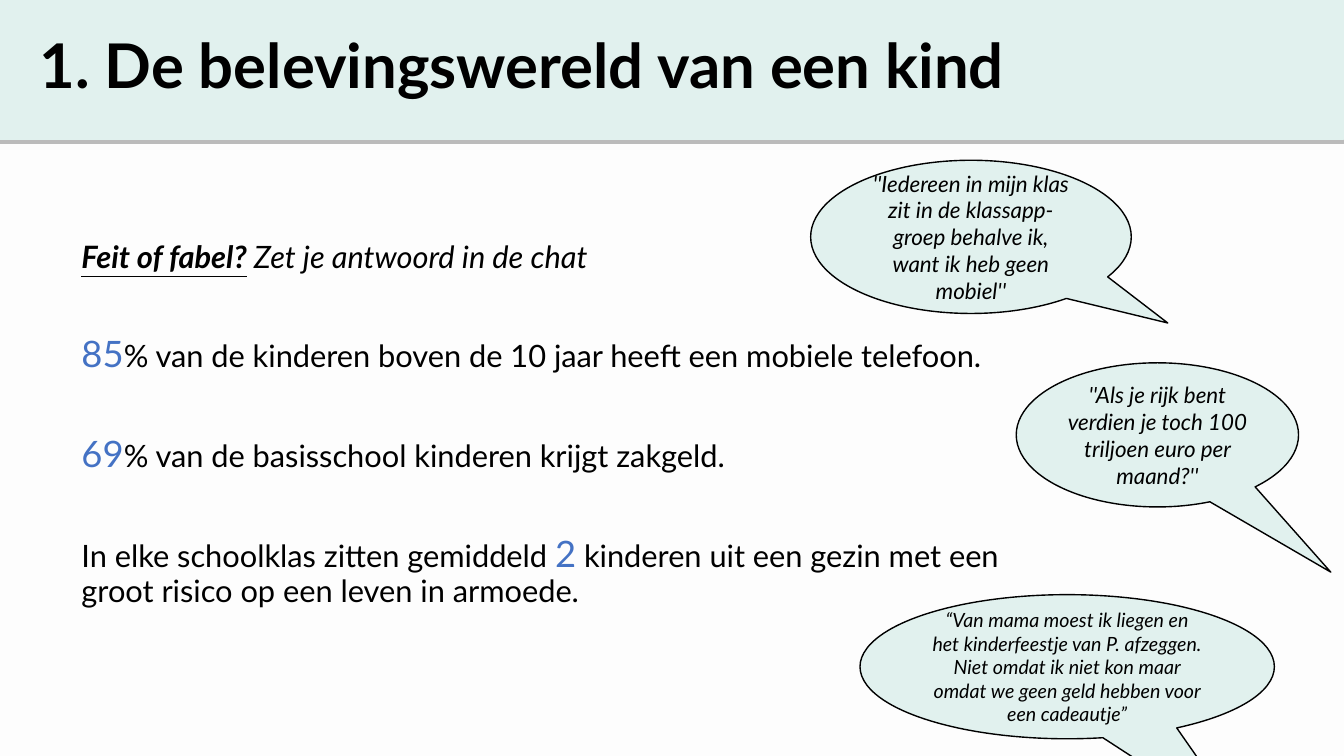
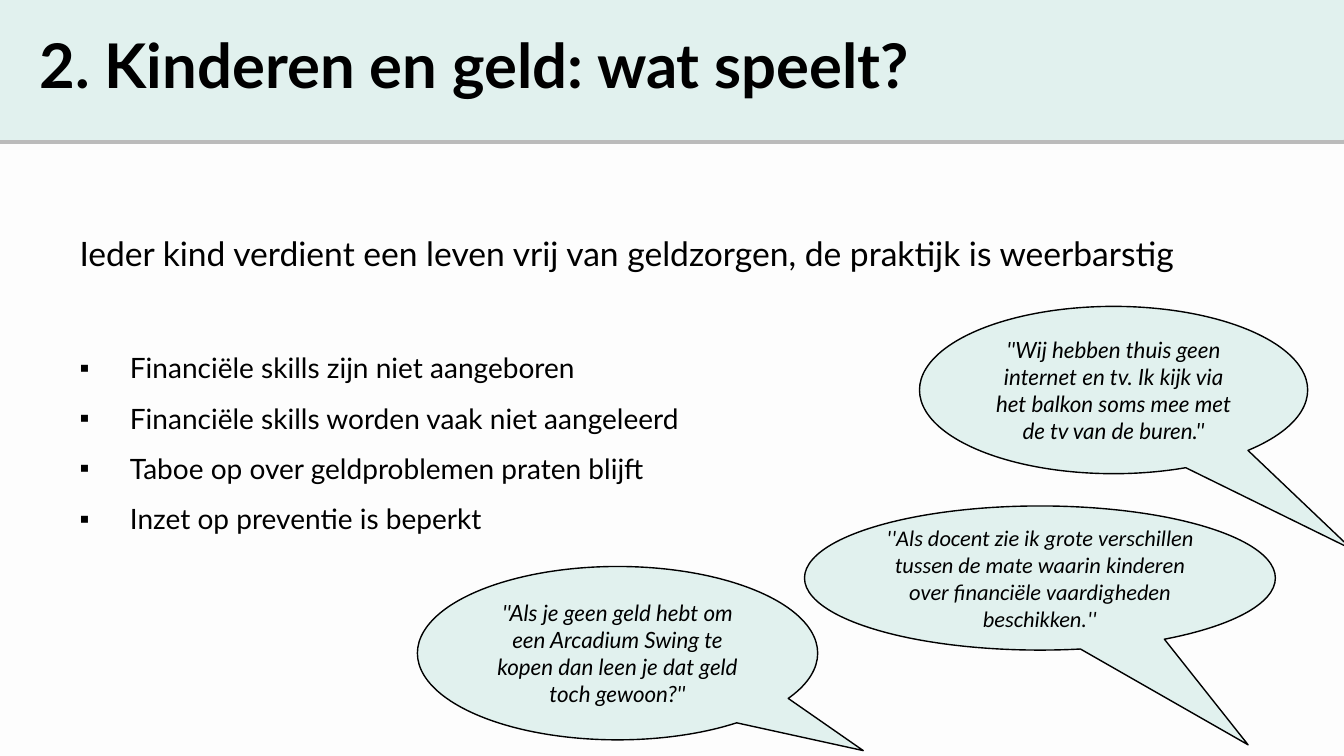
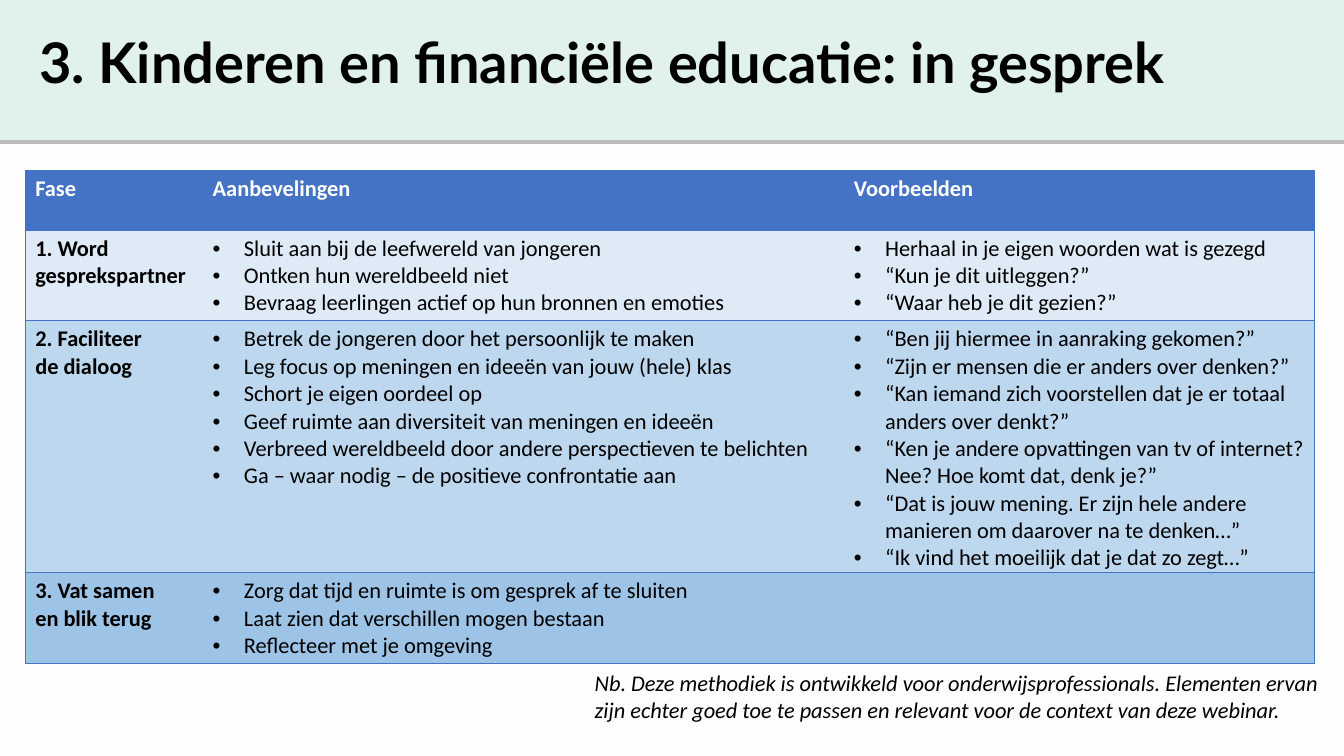
from lxml.etree import SubElement as Sub
from pptx import Presentation
from pptx.dml.color import RGBColor as Rgb
from pptx.enum.shapes import MSO_SHAPE as Kind
from pptx.enum.text import MSO_ANCHOR as Anchor, PP_ALIGN as Align
from pptx.oxml import parse_xml
from pptx.oxml.ns import nsdecls, qn
from pptx.util import Inches, Pt

# Shared look
PAPER = Rgb(0xFD, 0xFD, 0xFD)
MINT = Rgb(0xE1, 0xF1, 0xEE)
BLACK = Rgb(0, 0, 0)
WHITE = Rgb(0xFF, 0xFF, 0xFF)
BLUE = Rgb(0x44, 0x72, 0xC4)
TINTS = [Rgb(0xDE, 0xEB, 0xF7), Rgb(0xBD, 0xD7, 0xEE), Rgb(0x9D, 0xC3, 0xE6)]
HEAD, BODY = "Lato", "Calibri"
WIDE, HIGH = 13.33, 7.5
PLAIN = "{2D5ABB26-0587-4C30-8999-92F81FD0307C}"


def write(frame, *runs, size=16, font=HEAD, color=BLACK, bold=False,
          italic=False, align=Align.LEFT, line=None, before=None,
          bullet=None, indent=0):
    """Add a paragraph; a run is a text or a (text, changes) pair."""
    para = frame.paragraphs[0]
    if para.runs:
        para = frame.add_paragraph()
    para.alignment = align
    if line:
        para.line_spacing = line
    if before:
        para.space_before = Pt(before)
    if bullet:
        props = para._p.get_or_add_pPr()
        props.set("marL", str(Inches(indent)))
        props.set("indent", str(-Inches(indent)))
        Sub(props, qn("a:buFont")).set("typeface", "Arial")
        Sub(props, qn("a:buChar")).set("char", bullet)
    base = dict(size=size, bold=bold, italic=italic, color=color, under=False)
    for item in runs:
        text, diff = (item, {}) if isinstance(item, str) else item
        look = {**base, **diff}
        run = para.add_run()
        run.text = text
        run.font.name = font
        run.font.size = Pt(look["size"])
        run.font.bold = look["bold"]
        run.font.italic = look["italic"]
        run.font.underline = look["under"]
        run.font.color.rgb = look["color"]


def text_box(slide, box):
    frame = slide.shapes.add_textbox(*map(Inches, box)).text_frame
    frame.word_wrap = True
    return frame


def mint_shape(slide, kind, box, edge, width):
    shape = slide.shapes.add_shape(kind, *map(Inches, box))
    shape.shadow.inherit = False
    shape.fill.solid()
    shape.fill.fore_color.rgb = MINT
    shape.line.color.rgb = edge
    shape.line.width = Pt(width)
    shape.text_frame.word_wrap = True
    return shape


def start(deck, title, size=44):
    """New slide with the title band and its hard shadow."""
    slide = deck.slides.add_slide(deck.slide_layouts[6])
    slide.background.fill.solid()
    slide.background.fill.fore_color.rgb = PAPER
    band = mint_shape(slide, Kind.RECTANGLE, (0, 0, WIDE, 1.38), MINT, 0.75)
    band._element.spPr.find(qn("a:effectLst")).append(parse_xml(
        f'<a:outerShdw {nsdecls("a")} blurRad="0" dist="{Pt(3)}" '
        'dir="5400000" algn="t" rotWithShape="0"><a:srgbClr val="000000">'
        '<a:alpha val="25000"/></a:srgbClr></a:outerShdw>'))
    frame = band.text_frame
    frame.vertical_anchor = Anchor.TOP
    frame.margin_left, frame.margin_top = Inches(0.39), Inches(0.35)
    frame.margin_right, frame.margin_bottom = Inches(0.79), Inches(0.28)
    write(frame, title, size=size, bold=True, line=0.9)
    return slide


def quote(slide, box, tail, text, **look):
    """Speech balloon; tail is the tip as a share of the box."""
    shape = mint_shape(slide, Kind.OVAL_CALLOUT, box, BLACK, 1)
    shape.adjustments[0], shape.adjustments[1] = tail
    shape.text_frame.vertical_anchor = Anchor.MIDDLE
    write(shape.text_frame, text, italic=True, align=Align.CENTER, **look)


def edge(cell, side):
    """Thin blue border, kept ahead of the cell's fill."""
    props = cell._tc.get_or_add_tcPr()
    rule = parse_xml(
        f'<a:ln{side} {nsdecls("a")} w="{Pt(0.5)}"><a:solidFill>'
        f'<a:srgbClr val="{BLUE}"/></a:solidFill></a:ln{side}>')
    props.insert(len(props) - 1, rule)


def phases(slide, box, cols, heights, heads, rows):
    """Table with a header, bold first column and bulleted lists."""
    table = slide.shapes.add_table(
        len(rows) + 1, len(cols), *map(Inches, box)).table
    table._tbl.tblPr.find(qn("a:tableStyleId")).text = PLAIN
    table.horz_banding = False
    for col, width in zip(table.columns, cols):
        col.width = Inches(width)
    for row, height in zip(table.rows, heights):
        row.height = Inches(height)
    fills = [BLUE] + TINTS
    for r, row in enumerate([[[head] for head in heads]] + rows):
        for c, lines in enumerate(row):
            cell = table.cell(r, c)
            cell.fill.solid()
            cell.fill.fore_color.rgb = fills[r]
            strong = r == 0 or c == 0
            for text in lines:
                write(cell.text_frame, text, font=BODY, bold=strong,
                      color=WHITE if r == 0 else BLACK,
                      bullet=None if strong else "•", indent=0.31)
            sides = {"L": c == 0, "R": c == len(cols) - 1,
                     "T": True, "B": r == len(rows)}
            for side, shown in sides.items():
                if shown:
                    edge(cell, side)


def world(deck):
    slide = start(deck, "1. De belevingswereld van een kind")
    # Facts
    frame = text_box(slide, (0.71, 2.35, 9.42, 5.15))
    big = dict(size=26, color=BLUE)
    write(frame, ("Feit of fabel?", dict(bold=True, under=True)),
          " Zet je antwoord in de chat",
          size=22, italic=True, line=0.9, before=10)
    for runs in (
        [("85", big),
         "% van de kinderen boven de 10 jaar heeft een mobiele telefoon."],
        [("69", big), "% van de basisschool kinderen krijgt zakgeld."],
        ["In elke schoolklas zitten gemiddeld ", ("2", big),
         " kinderen uit een gezin met een groot risico op een leven "
         "in armoede."],
    ):
        write(frame, *runs, size=22, line=0.9, before=43.5)
    # Quotes
    quote(slide, (8.04, 1.59, 3.18, 1.52), (0.614, 0.562),
          "''Iedereen in mijn klas zit in de klassapp-groep behalve ik, "
          "want ik heb geen mobiel''")
    quote(slide, (8.53, 5.9, 4.11, 1.43), (0.442, 1.157),
          "“Van mama moest ik liegen en het kinderfeestje van P. afzeggen. "
          "Niet omdat ik niet kon maar omdat we geen geld hebben voor "
          "een cadeautje”", size=14)
    quote(slide, (10.08, 3.6, 2.8, 1.43), (0.614, 0.952),
          "''Als je rijk bent verdien je toch 100 triljoen euro per maand?''")


def money(deck):
    slide = start(deck, "2. Kinderen en geld: wat speelt?")
    # Statement and points
    frame = text_box(slide, (0.69, 2.06, 12.05, 3.8))
    write(frame, "Ieder kind verdient een leven vrij van geldzorgen, "
          "de praktijk is weerbarstig", size=24, line=1.5)
    points = ["Financiële skills zijn niet aangeboren",
              "Financiële skills worden vaak niet aangeleerd",
              "Taboe op over geldproblemen praten blijft",
              "Inzet op preventie is beperkt"]
    for i, point in enumerate(points):
        write(frame, point, size=20, line=1.5, before=0 if i else 43.5,
              bullet="▪", indent=0.5)
    # Quotes
    quote(slide, (4.14, 5.62, 3.97, 1.72), (0.614, 0.562),
          "''Als je geen geld hebt om een Arcadium Swing te kopen dan leen "
          "je dat geld toch gewoon?''")
    quote(slide, (7.98, 5.02, 4.67, 1.43), (0.442, 1.157),
          "''Als docent zie ik grote verschillen tussen de mate waarin "
          "kinderen over financiële vaardigheden beschikken.''", font=BODY)
    quote(slide, (9.12, 3.04, 3.85, 1.66), (0.614, 0.952),
          "''Wij hebben thuis geen internet en tv. Ik kijk via het balkon "
          "soms mee met de tv van de buren.''")


def talk(deck):
    slide = start(deck, "3. Kinderen en financiële educatie: in gesprek", 40)
    # Phases
    rows = [
        [["1. Word gesprekspartner"],
         ["Sluit aan bij de leefwereld van jongeren",
          "Ontken hun wereldbeeld niet",
          "Bevraag leerlingen actief op hun bronnen en emoties"],
         ["Herhaal in je eigen woorden wat is gezegd",
          "“Kun je dit uitleggen?”",
          "“Waar heb je dit gezien?”"]],
        [["2. Faciliteer", "de dialoog"],
         ["Betrek de jongeren door het persoonlijk te maken",
          "Leg focus op meningen en ideeën van jouw (hele) klas",
          "Schort je eigen oordeel op",
          "Geef ruimte aan diversiteit van meningen en ideeën",
          "Verbreed wereldbeeld door andere perspectieven te belichten",
          "Ga – waar nodig – de positieve confrontatie aan"],
         ["“Ben jij hiermee in aanraking gekomen?”",
          "“Zijn er mensen die er anders over denken?”",
          "“Kan iemand zich voorstellen dat je er totaal anders over denkt?”",
          "“Ken je andere opvattingen van tv of internet? Nee? Hoe komt dat, "
          "denk je?”",
          "“Dat is jouw mening. Er zijn hele andere manieren om daarover "
          "na te denken…”",
          "“Ik vind het moeilijk dat je dat zo zegt…”"]],
        [["3. Vat samen", "en blik terug"],
         ["Zorg dat tijd en ruimte is om gesprek af te sluiten",
          "Laat zien dat verschillen mogen bestaan",
          "Reflecteer met je omgeving"],
         []],
    ]
    phases(slide, (0.25, 1.69, 12.79, 4.58), (1.76, 6.36, 4.67),
           (0.59, 0.83, 2.33, 0.83),
           ("Fase", "Aanbevelingen", "Voorbeelden"), rows)
    # Closing note
    write(text_box(slide, (5.8, 6.59, 7.64, 0.64)),
          "Nb. Deze methodiek is ontwikkeld voor onderwijsprofessionals. "
          "Elementen ervan zijn echter goed toe te passen en relevant voor "
          "de context van deze webinar.", font=BODY, italic=True)


def main():
    deck = Presentation()
    deck.slide_width, deck.slide_height = Inches(WIDE), Inches(HIGH)
    for build in (world, money, talk):
        build(deck)
    deck.save("out.pptx")


if __name__ == "__main__":
    main()
